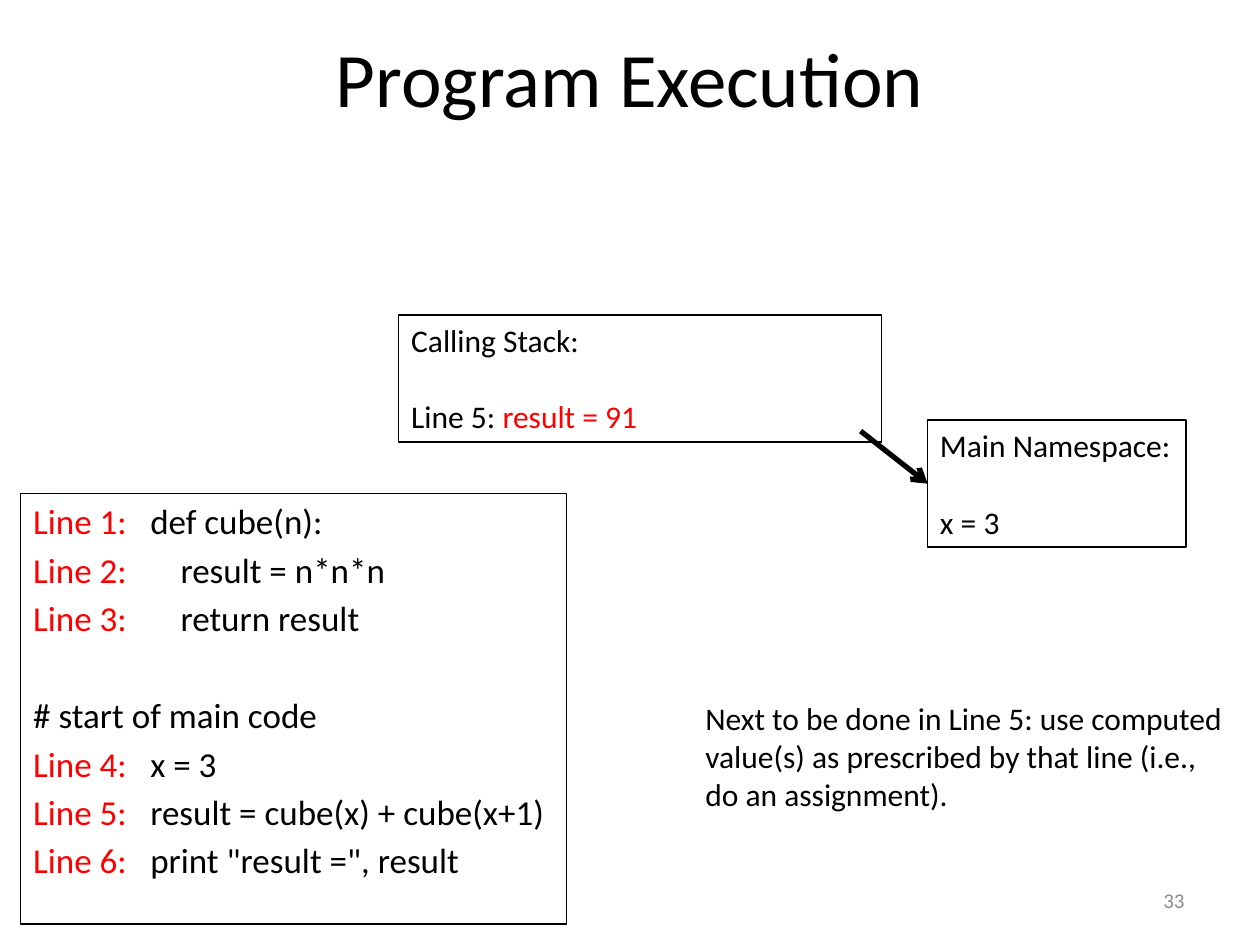
"""Build the Program Execution slide with its code, calling stack and namespace."""
from dataclasses import dataclass
from typing import Optional

from lxml.etree import SubElement
from pptx import Presentation
from pptx.dml.color import RGBColor
from pptx.enum.shapes import MSO_CONNECTOR
from pptx.enum.text import MSO_ANCHOR, PP_ALIGN
from pptx.oxml.ns import qn
from pptx.util import Cm, Pt


@dataclass(frozen=True)
class Theme:
    font: str = "Calibri"
    black: RGBColor = RGBColor(0, 0, 0)
    red: RGBColor = RGBColor(255, 0, 0)
    grey: RGBColor = RGBColor(0x8C, 0x8C, 0x8C)
    title: Pt = Pt(44)
    code: Pt = Pt(20)
    body: Pt = Pt(18)
    number: Pt = Pt(12)
    border: Pt = Pt(0.75)
    arrow: Pt = Pt(3)


THEME = Theme()


@dataclass(frozen=True)
class Run:
    text: str
    color: RGBColor = THEME.black


@dataclass(frozen=True)
class Line:
    runs: tuple[Run, ...]
    before: float = 0
    tab: Optional[float] = None


@dataclass(frozen=True)
class Box:
    left: float
    top: float
    width: float
    height: float
    lines: tuple[Line, ...]
    size: Pt = THEME.body
    bordered: bool = False
    align: PP_ALIGN = PP_ALIGN.LEFT
    anchor: MSO_ANCHOR = MSO_ANCHOR.TOP
    wrap: bool = True


LINE_GAP = 3.6
BLANK_LINE = 22
CODE_TAB = 2.36
BODY_TAB = 2.97


def plain(text: str, color: RGBColor = THEME.black, before: float = 0) -> Line:
    return Line((Run(text, color),), before)


def code(number: int, text: str, tab: float = CODE_TAB, before: float = LINE_GAP) -> Line:
    return Line((Run(f"Line {number}:", THEME.red), Run(f"\t{text}")), before, tab)


BOXES = (
    Box(1.27, 0.43, 22.86, 2.24, (plain("Program Execution"),), THEME.title,
        align=PP_ALIGN.CENTER, anchor=MSO_ANCHOR.MIDDLE),
    Box(0.42, 9.95, 11, 8.68, (
        code(1, "def cube(n):", before=0),
        code(2, "result = n*n*n", BODY_TAB),
        code(3, "return result", BODY_TAB),
        plain("# start of main code", before=2 * LINE_GAP + 24.4),
        code(4, "x = 3"),
        code(5, "result = cube(x) + cube(x+1)"),
        code(6, 'print "result =", result'),
    ), THEME.code, bordered=True),
    Box(18.2, 17.65, 5.93, 1.01, (plain("33", THEME.grey),), THEME.number,
        align=PP_ALIGN.RIGHT, anchor=MSO_ANCHOR.MIDDLE),
    Box(18.7, 8.47, 5.21, 2.56, (
        plain("Main Namespace:"), plain("x = 3", before=BLANK_LINE),
    ), bordered=True),
    Box(8.04, 6.35, 9.73, 2.56, (
        plain("Calling Stack:"),
        Line((Run("Line 5: "), Run("result = 91", THEME.red)), BLANK_LINE),
    ), bordered=True),
    Box(13.97, 13.97, 11.07, 2.56, (
        plain("Next to be done in Line 5: use computed\n"
              "value(s) as prescribed by that line (i.e.,\n"
              "do an assignment)."),
    ), wrap=False),
)


def apply_format(target: object, values: dict[str, object]) -> None:
    for name, value in values.items():
        setattr(target, name, value)


def add_run(paragraph, text: str, color: RGBColor, size: Pt) -> None:
    run = paragraph.add_run()
    run.text = text
    apply_format(run.font, {"name": THEME.font, "size": size})
    run.font.color.rgb = color


def write_line(paragraph, line: Line, box: Box) -> None:
    apply_format(paragraph, {"alignment": box.align, "space_before": Pt(line.before)})
    if line.tab is not None:
        tab_list = SubElement(paragraph._p.get_or_add_pPr(), qn("a:tabLst"))
        SubElement(tab_list, qn("a:tab"), pos=str(Cm(line.tab)), algn="l")
    for run in line.runs:
        for index, part in enumerate(run.text.split("\n")):
            if index:
                paragraph.add_line_break()
            add_run(paragraph, part, run.color, box.size)


def add_box(slide, box: Box) -> None:
    shape = slide.shapes.add_textbox(*map(Cm, (box.left, box.top, box.width, box.height)))
    frame = shape.text_frame
    apply_format(frame, {"word_wrap": box.wrap, "vertical_anchor": box.anchor})
    if box.bordered:
        shape.line.color.rgb = THEME.black
        shape.line.width = THEME.border
    for index, line in enumerate(box.lines):
        paragraph = frame.add_paragraph() if index else frame.paragraphs[0]
        write_line(paragraph, line, box)


def add_arrow(slide, *ends: float) -> None:
    connector = slide.shapes.add_connector(MSO_CONNECTOR.STRAIGHT, *map(Cm, ends))
    connector.line.color.rgb = THEME.black
    connector.line.width = THEME.arrow
    SubElement(connector.line._get_or_add_ln(), qn("a:tailEnd"), type="arrow")
    SubElement(connector._element.spPr, qn("a:effectLst"))


def main() -> None:
    presentation = Presentation()
    apply_format(presentation, {"slide_width": Cm(25.4), "slide_height": Cm(19.05)})
    slide = presentation.slides.add_slide(presentation.slide_layouts[6])
    for box in BOXES:
        add_box(slide, box)
    add_arrow(slide, 17.35, 8.69, 18.7, 9.75)
    presentation.save("out.pptx")


if __name__ == "__main__":
    main()
